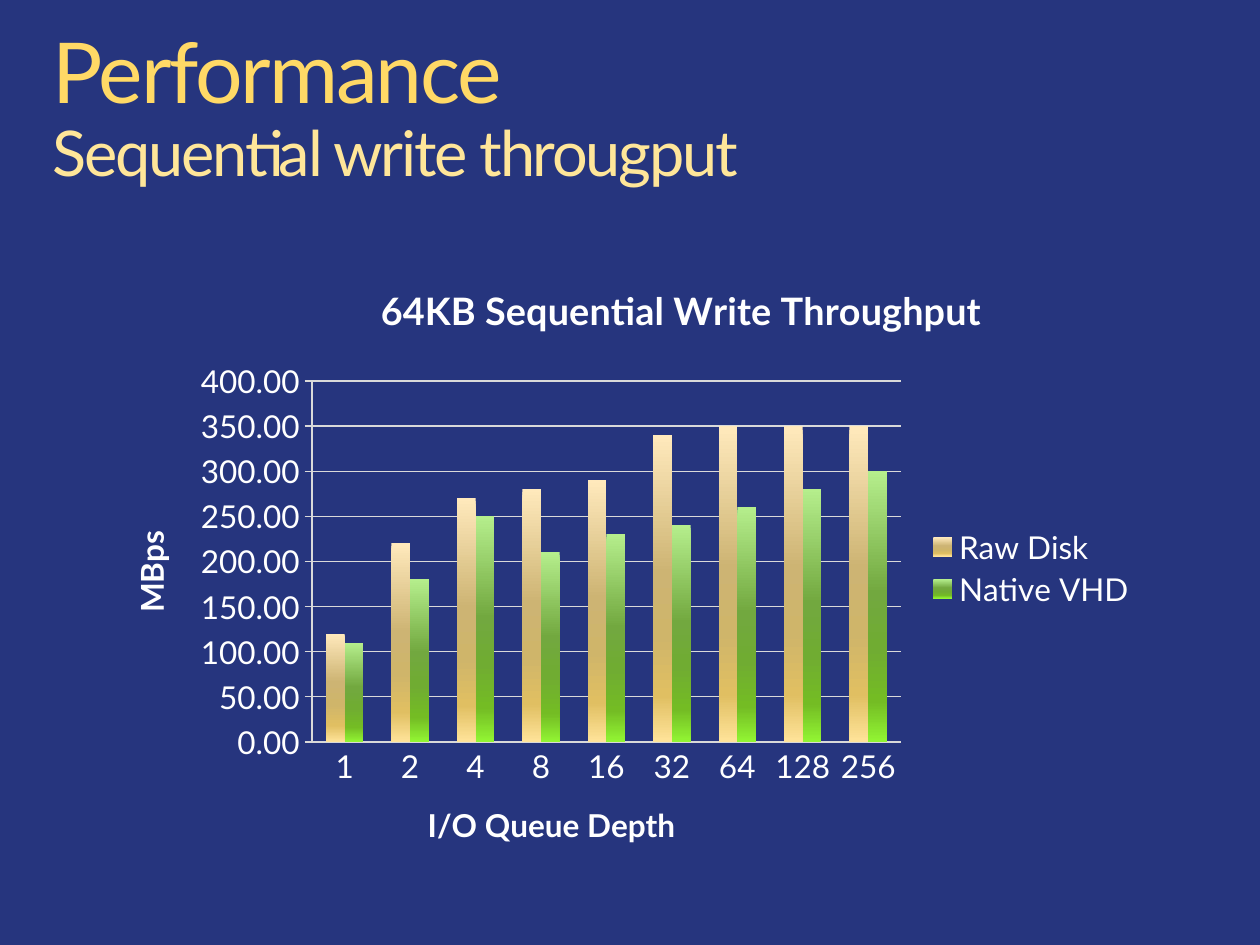
from dataclasses import dataclass

from lxml import etree
from pptx import Presentation
from pptx.chart.data import CategoryChartData
from pptx.dml.color import RGBColor
from pptx.enum.chart import XL_CHART_TYPE, XL_LEGEND_POSITION, XL_TICK_MARK
from pptx.enum.text import MSO_ANCHOR, PP_ALIGN
from pptx.oxml.ns import qn
from pptx.util import Emu, Pt

COLUMNS = XL_CHART_TYPE.COLUMN_CLUSTERED
LEGEND_RIGHT = XL_LEGEND_POSITION.RIGHT
TICK_NONE, TICK_CROSS = XL_TICK_MARK.NONE, XL_TICK_MARK.CROSS
TOP, LEFT = MSO_ANCHOR.TOP, PP_ALIGN.LEFT

EMU_PER_PX = 914400 // 126
FONT = "Lato"
COLORS = {
    "background": "26357E",
    "title": "FFD966",
    "subtitle": "FFE699",
    "text": "FFFFFF",
    "grid": "D9D9D9",
}


@dataclass(frozen=True)
class Box:
    left: int
    top: int
    width: int
    height: int

    def emu(self) -> list[Emu]:
        return [px(n) for n in (self.left, self.top, self.width, self.height)]


@dataclass(frozen=True)
class Series:
    name: str
    values: tuple[int, ...]
    gradient: tuple[tuple[int, str], ...]


TITLE_BOX = Box(53, 31, 1154, 160)
CHART_BOX = Box(101, 262, 1048, 612)
PLOT_BOX = Box(312, 381, 589, 361)
LEGEND_BOX = Box(925, 524, 212, 88)
CHART_TITLE_BOX = Box(374, 276, 0, 0)
CATEGORY_TITLE_BOX = Box(422, 797, 0, 0)
VALUE_TITLE_BOX = Box(123, 525, 0, 0)

QUEUE_DEPTHS = [str(2 ** power) for power in range(9)]
SERIES = (
    Series("Raw Disk", (120, 220, 270, 280, 290, 340, 350, 350, 350),
           ((0, "FFE9BC"), (45, "CDB473"), (65, "CFB56A"), (85, "E0BF62"), (100, "FFE399"))),
    Series("Native VHD", (110, 180, 250, 210, 230, 240, 260, 280, 300),
           ((0, "B5EE8C"), (45, "72A83F"), (65, "70AC32"), (85, "74BC24"), (100, "92F533"))),
)


def px(length: int) -> Emu:
    return Emu(length * EMU_PER_PX)


def color(name: str) -> RGBColor:
    return RGBColor.from_string(COLORS[name])


def set_font(font, size: float, color_name: str, bold: bool = False) -> None:
    font.name = FONT
    font.size = Pt(size)
    font.bold = bold
    font.color.rgb = color(color_name)


def add_title(slide) -> None:
    shape = slide.shapes.title
    shape.left, shape.top, shape.width, shape.height = TITLE_BOX.emu()
    frame = shape.text_frame
    frame.margin_left = frame.margin_right = frame.margin_top = frame.margin_bottom = 0
    frame.vertical_anchor = TOP
    frame.word_wrap = True
    paragraph = frame.paragraphs[0]
    paragraph.alignment = LEFT
    paragraph.line_spacing = 0.9
    heading = paragraph.add_run()
    heading.text = "Performance"
    set_font(heading.font, 48, "title")
    paragraph.add_line_break()
    subtitle = paragraph.add_run()
    subtitle.text = "Sequential write througput"
    set_font(subtitle.font, 36, "subtitle")
    for run in (heading, subtitle):
        run.font._element.set("spc", "-125")


def place(parent, index: int, box: Box) -> None:
    for old in parent.findall(qn("c:layout")):
        parent.remove(old)
    layout = etree.Element(qn("c:layout"))
    manual = etree.SubElement(layout, qn("c:manualLayout"))
    settings = {"xMode": "edge", "yMode": "edge",
                "x": (box.left - CHART_BOX.left) / CHART_BOX.width,
                "y": (box.top - CHART_BOX.top) / CHART_BOX.height}
    if box.width:
        settings["w"] = box.width / CHART_BOX.width
        settings["h"] = box.height / CHART_BOX.height
    if parent.tag == qn("c:plotArea"):
        settings = {"layoutTarget": "inner", **settings}
    for tag, value in settings.items():
        etree.SubElement(manual, qn(f"c:{tag}")).set("val", str(value))
    parent.insert(index, layout)


def set_chart_title(owner, text: str, size: float, box: Box, rotation: int = 0) -> None:
    owner.has_title = True
    title = owner.chart_title if hasattr(owner, "chart_title") else owner.axis_title
    title.text_frame.text = text
    set_font(title.text_frame.paragraphs[0].font, size, "text", True)
    body = title._element.find(".//" + qn("a:bodyPr"))
    body.set("rot", str(rotation * 60000))
    body.set("vert", "horz")
    place(title._element, 1, box)


def fill_gradient(series, stops: tuple[tuple[int, str], ...]) -> None:
    series.format.fill.gradient()
    series.format.fill.gradient_angle = 270
    stop_list = series._element.find(".//" + qn("a:gsLst"))
    for old in list(stop_list):
        stop_list.remove(old)
    for position, hex_color in stops:
        stop = etree.SubElement(stop_list, qn("a:gs"), pos=str(position * 1000))
        etree.SubElement(stop, qn("a:srgbClr"), val=hex_color)


def add_throughput_chart(slide) -> None:
    data = CategoryChartData(number_format="0.00")
    data.categories = QUEUE_DEPTHS
    for item in SERIES:
        data.add_series(item.name, item.values)
    chart = slide.shapes.add_chart(COLUMNS, *CHART_BOX.emu(), data).chart
    set_font(chart.font, 18, "text")
    set_chart_title(chart, "64KB Sequential Write Throughput", 21.6, CHART_TITLE_BOX)

    plot = chart.plots[0]
    plot.gap_width = 150
    plot.overlap = 0
    plot.vary_by_categories = False
    for series, item in zip(plot.series, SERIES):
        fill_gradient(series, item.gradient)
    place(chart._chartSpace.find(".//" + qn("c:plotArea")), 0, PLOT_BOX)

    categories, values = chart.category_axis, chart.value_axis
    set_chart_title(categories, "I/O Queue Depth", 18, CATEGORY_TITLE_BOX)
    set_chart_title(values, "MBps", 18, VALUE_TITLE_BOX, -90)
    categories.major_tick_mark = TICK_NONE
    values.major_tick_mark = TICK_CROSS
    values.minimum_scale, values.maximum_scale, values.major_unit = 0, 400, 50
    values.tick_labels.number_format = "0.00"
    values.tick_labels.number_format_is_linked = False
    values.has_major_gridlines = True
    for line in (categories.format.line, values.format.line, values.major_gridlines.format.line):
        line.color.rgb = color("grid")
        line.width = Pt(0.75)

    chart.has_legend = True
    chart.legend.position = LEGEND_RIGHT
    chart.legend.include_in_layout = False
    set_font(chart.legend.font, 18, "text")
    place(chart.legend._element, 1, LEGEND_BOX)


def main() -> None:
    presentation = Presentation()
    presentation.slide_width, presentation.slide_height = px(1260), px(945)
    slide = presentation.slides.add_slide(presentation.slide_layouts[5])
    slide.background.fill.solid()
    slide.background.fill.fore_color.rgb = color("background")
    add_title(slide)
    add_throughput_chart(slide)
    presentation.save("out.pptx")


if __name__ == "__main__":
    main()
